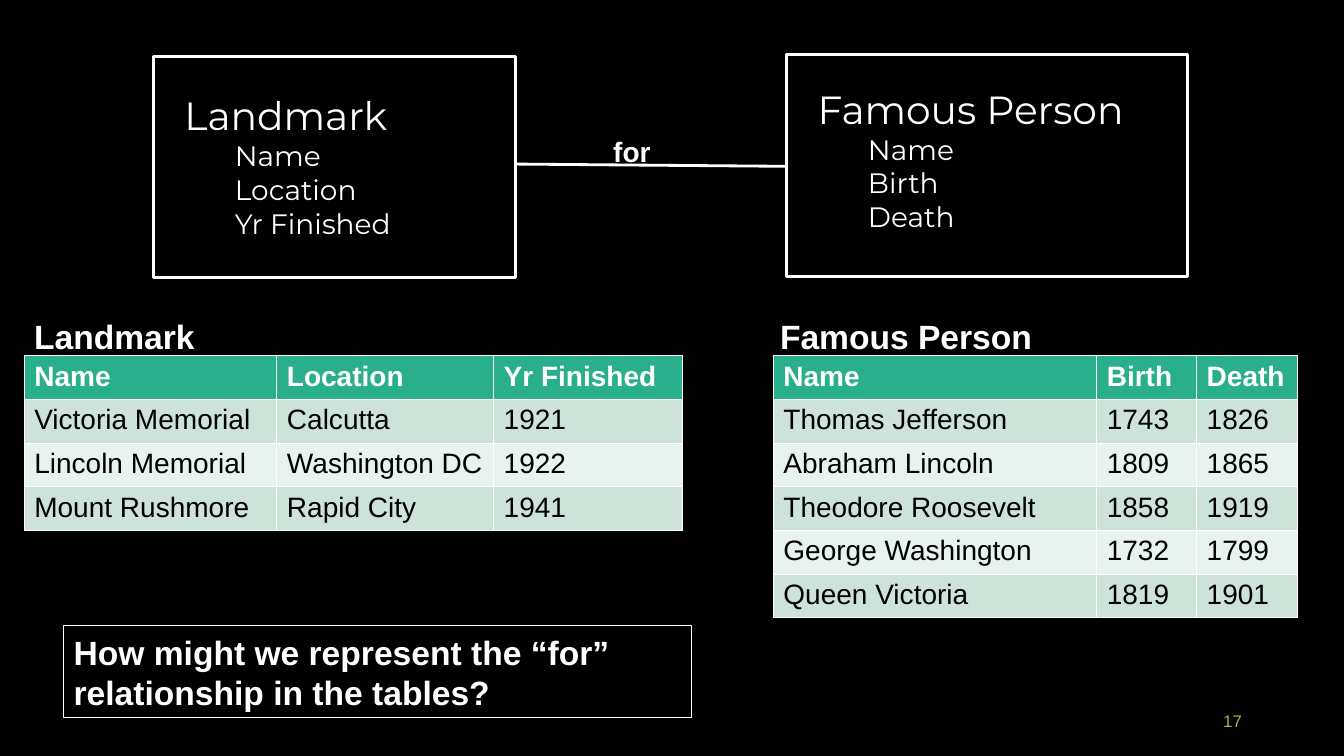
"""Build the slide that relates landmarks to famous people."""
import pptx
import pptx.dml.color
import pptx.enum.shapes
import pptx.enum.text
import pptx.oxml.ns
import pptx.util
import lxml.etree

Pt = pptx.util.Pt
RGBColor = pptx.dml.color.RGBColor
ALIGN = pptx.enum.text.PP_ALIGN
ANCHOR = pptx.enum.text.MSO_ANCHOR

BLACK = RGBColor(0x00, 0x00, 0x00)
WHITE = RGBColor(0xFF, 0xFF, 0xFF)
LIME = RGBColor(0x97, 0xBE, 0x49)
HEADER_GREEN = RGBColor(0x29, 0xAF, 0x8C)
BANDS = (RGBColor(0xCD, 0xE3, 0xDA), RGBColor(0xE8, 0xF2, 0xEE))
ROW_HEIGHT = 31.2

LANDMARKS = [
    ("Name", "Location", "Yr Finished"),
    ("Victoria Memorial", "Calcutta", "1921"),
    ("Lincoln Memorial", "Washington DC", "1922"),
    ("Mount Rushmore", "Rapid City", "1941"),
]
PEOPLE = [
    ("Name", "Birth", "Death"),
    ("Thomas Jefferson", "1743", "1826"),
    ("Abraham Lincoln", "1809", "1865"),
    ("Theodore Roosevelt", "1858", "1919"),
    ("George Washington", "1732", "1799"),
    ("Queen Victoria", "1819", "1901"),
]


def add_run(paragraph, text, size, color=WHITE, bold=False, font="Arial"):
    run = paragraph.add_run()
    run.text = text
    run.font.name = font
    run.font.size = Pt(size)
    run.font.bold = bold
    run.font.color.rgb = color


def place(shape, left, top, width, height):
    shape.left, shape.top = Pt(left), Pt(top)
    shape.width, shape.height = Pt(width), Pt(height)


def outline(shape, weight):
    shape.line.color.rgb = WHITE
    shape.line.width = Pt(weight)


def prepare_frame(frame, anchor):
    frame.word_wrap = True
    frame.auto_size = pptx.enum.text.MSO_AUTO_SIZE.NONE
    frame.vertical_anchor = anchor


def fill_entity(entity, box, top_inset, name, attributes):
    place(entity, *box)
    outline(entity, 2)
    frame = entity.text_frame
    prepare_frame(frame, ANCHOR.TOP)
    frame.margin_left = frame.margin_right = Pt(22.4)
    frame.margin_top, frame.margin_bottom = Pt(top_inset), Pt(10.8)
    for index, text in enumerate([name, *attributes]):
        paragraph = frame.add_paragraph() if index else frame.paragraphs[0]
        paragraph.level = 1 if index else 0
        paragraph.space_before = Pt(0)
        properties = paragraph._p.get_or_add_pPr()
        properties.set("marL", str(Pt(36 * paragraph.level)))
        properties.set("indent", "0")
        lxml.etree.SubElement(properties, pptx.oxml.ns.qn("a:buNone"))
        add_run(paragraph, text, 20 if index else 28, font="Montserrat")


def fill_question(question):
    place(question, 45.4, 447.1, 448.6, 65.5)
    question.fill.solid()
    question.fill.fore_color.rgb = BLACK
    outline(question, 0.75)
    prepare_frame(question.text_frame, ANCHOR.MIDDLE)
    paragraph = question.text_frame.paragraphs[0]
    paragraph.alignment = ALIGN.LEFT
    add_run(paragraph, "How might we represent the “for” relationship in the tables?",
            24, bold=True)


def add_relationship(slide):
    relationship = slide.shapes.add_connector(
        pptx.enum.shapes.MSO_CONNECTOR.STRAIGHT, Pt(368), Pt(117.2), Pt(561.6), Pt(118.8))
    outline(relationship, 2)
    lxml.etree.SubElement(relationship._element.spPr, pptx.oxml.ns.qn("a:effectLst"))


def add_label(slide, box, text, size, color=WHITE, bold=True,
              align=ALIGN.LEFT, anchor=ANCHOR.TOP):
    label = slide.shapes.add_textbox(*map(Pt, box))
    prepare_frame(label.text_frame, anchor)
    paragraph = label.text_frame.paragraphs[0]
    paragraph.alignment = align
    add_run(paragraph, text, size, color, bold)


def add_records(slide, left, top, widths, records):
    table = slide.shapes.add_table(
        len(records), len(widths), Pt(left), Pt(top),
        Pt(sum(widths)), Pt(ROW_HEIGHT * len(records))).table
    for column, width in zip(table.columns, widths):
        column.width = Pt(width)
    for row, record in enumerate(records):
        table.rows[row].height = Pt(ROW_HEIGHT)
        for column, value in enumerate(record):
            cell = table.cell(row, column)
            cell.fill.solid()
            cell.fill.fore_color.rgb = BANDS[(row - 1) % 2] if row else HEADER_GREEN
            add_run(cell.text_frame.paragraphs[0], value, 20,
                    BLACK if row else WHITE, bold=row == 0)


def main():
    deck = pptx.Presentation()
    deck.slide_width, deck.slide_height = Pt(960), Pt(540)
    slide = deck.slides.add_slide(deck.slide_layouts.get_by_name("Two Content"))
    slide.background.fill.solid()
    slide.background.fill.fore_color.rgb = BLACK

    question, landmark, person = slide.placeholders
    fill_question(question)
    fill_entity(landmark, (109.4, 40.3, 258.6, 157.7), 25.2,
                "Landmark", ["Name", "Location", "Yr Finished"])
    fill_entity(person, (561.6, 38.9, 286.8, 158.4), 21.8,
                "Famous Person", ["Name", "Birth", "Death"])
    add_relationship(slide)
    add_label(slide, (415.4, 95.8, 72, 24.5), "for", 20,
              align=ALIGN.CENTER, anchor=ANCHOR.MIDDLE)

    add_records(slide, 17.3, 254.2, (180.5, 154.8, 135.2), LANDMARKS)
    add_records(slide, 552.4, 254.2, (231, 71.4, 72), PEOPLE)
    add_label(slide, (17.3, 221.9, 267.1, 36), "Landmark", 24)
    add_label(slide, (550.1, 221.9, 196.6, 36), "Famous Person", 24)
    add_label(slide, (678.2, 500.4, 216, 28.8), "17", 12, LIME, False,
              ALIGN.RIGHT, ANCHOR.MIDDLE)
    deck.save("out.pptx")


if __name__ == "__main__":
    main()
